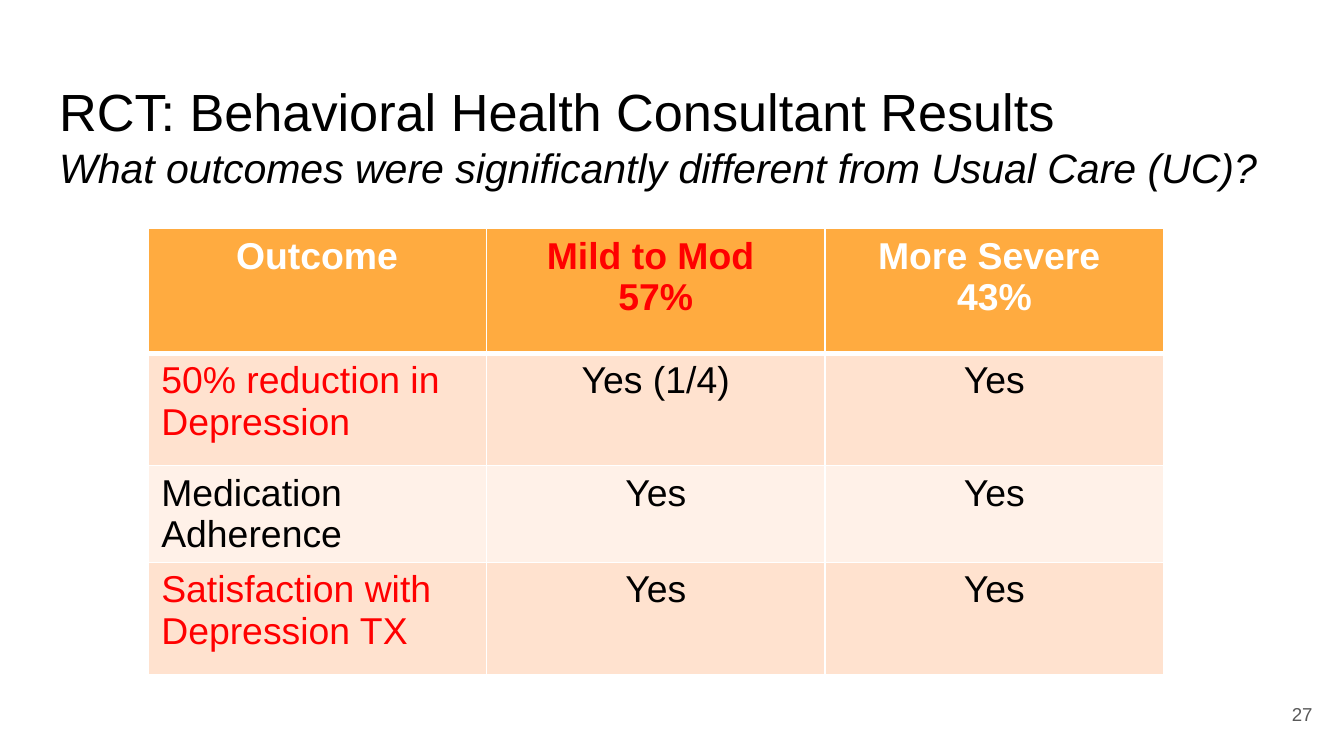
from dataclasses import dataclass

from pptx import Presentation
from pptx import util as u
from pptx.dml.color import RGBColor
from pptx.enum import text
from pptx.oxml.ns import qn
from lxml import etree

PX = 4572  # EMU per px, 200 px to the inch
LEFT, MID, RIGHT = text.PP_ALIGN.LEFT, text.PP_ALIGN.CENTER, text.PP_ALIGN.RIGHT


@dataclass(frozen=True)
class Theme:
    font: str = "Arial"
    black: str = "000000"
    white: str = "FFFFFF"
    red: str = "FF0000"
    grey: str = "595959"
    head: str = "FFAB40"
    bands: tuple = ("FFE2CF", "FFF1E8")
    title: int = 28
    sub: int = 22
    body: int = 20
    small: int = 10


class Deck:
    def __init__(self, theme, wide, high):
        self.theme = theme
        self.prs = Presentation()
        self.prs.slide_width, self.prs.slide_height = wide * PX, high * PX
        self.slide = self.prs.slides.add_slide(self.prs.slide_layouts[5])

    def style(self, para, size, color, align=LEFT, bold=False):
        para.alignment = align
        for run in para.runs:
            font = run.font
            font.name, font.size, font.bold = self.theme.font, u.Pt(size), bold
            font.color.rgb = RGBColor.from_string(color)

    def frame(self, shape, anchor):
        body = shape.text_frame
        body.word_wrap = True
        body.auto_size = text.MSO_AUTO_SIZE.NONE
        body.vertical_anchor = anchor
        body.margin_left = body.margin_right = 20 * PX
        body.margin_top = body.margin_bottom = 20 * PX
        return body

    def title(self, box, head, sub):
        shape = self.slide.shapes.title
        shape.left, shape.top, shape.width, shape.height = (n * PX for n in box)
        body = self.frame(shape, text.MSO_ANCHOR.TOP)
        para = body.paragraphs[0]
        para.text = f"{head}\v{sub}"
        self.style(para, self.theme.title, self.theme.black)
        font = para.runs[1].font
        font.size, font.italic = u.Pt(self.theme.sub), True
        # the line break would otherwise take the layout's larger size
        gap = para._p.find(qn("a:br"))
        etree.SubElement(gap, qn("a:rPr"), sz=str(self.theme.title * 100))

    def number(self, box, label):
        shape = self.slide.shapes.add_textbox(*(n * PX for n in box))
        body = self.frame(shape, text.MSO_ANCHOR.MIDDLE)
        body.text = label
        self.style(body.paragraphs[0], self.theme.small, self.theme.grey, RIGHT)

    def edge(self, cell, side, width):
        """Add a white border; sides must come before the cell's fill."""
        line = etree.Element(qn(f"a:{side}"), w=str(u.Pt(width)))
        fill = etree.SubElement(line, qn("a:solidFill"))
        etree.SubElement(fill, qn("a:srgbClr"), val=self.theme.white)
        props = cell._tc.get_or_add_tcPr()
        props.insert(len(props) - 1, line)

    def cell(self, cell, label, fill, color, align, bold, ends):
        cell.fill.solid()
        cell.fill.fore_color.rgb = RGBColor.from_string(fill)
        for side, width in zip(("lnL", "lnR", "lnT", "lnB"), (1, 1, *ends)):
            self.edge(cell, side, width)
        cell.text_frame.text = label
        for para in cell.text_frame.paragraphs:
            self.style(para, self.theme.body, color, align, bold)

    def table(self, left, top, wide, highs, rows, reds):
        """Build the grid; reds holds the (row, column) pairs set in red."""
        theme, count = self.theme, len(rows[0])
        grid = self.slide.shapes.add_table(
            len(rows), count, left * PX, top * PX,
            wide * count * PX, sum(highs) * PX).table
        for col in grid.columns:
            col.width = wide * PX
        for r, (high, labels) in enumerate(zip(highs, rows)):
            grid.rows[r].height = high * PX
            fill = theme.bands[(r - 1) % 2] if r else theme.head
            plain = theme.black if r else theme.white
            ends = (3 if r == 1 else 1, 1 if r else 3)
            for c, label in enumerate(labels):
                color = theme.red if (r, c) in reds else plain
                align = LEFT if r and c == 0 else MID
                self.cell(grid.cell(r, c), label, fill, color, align, r == 0, ends)


def main():
    deck = Deck(Theme(), 2000, 1125)
    deck.title((68, 98, 1864, 126), "RCT: Behavioral Health Consultant Results",
               "What outcomes were significantly different from Usual Care (UC)?")
    deck.number((1853, 1020, 120, 86), "27")
    rows = [
        ("Outcome", "Mild to Mod \n57%", "More Severe \n43%"),
        ("50% reduction in Depression", "Yes (1/4)", "Yes"),
        ("Medication Adherence", "Yes", "Yes"),
        ("Satisfaction with Depression TX", "Yes", "Yes"),
    ]
    deck.table(220, 340, 504, (186, 167, 120, 167), rows, {(0, 1), (1, 0), (3, 0)})
    deck.prs.save("out.pptx")


if __name__ == "__main__":
    main()
